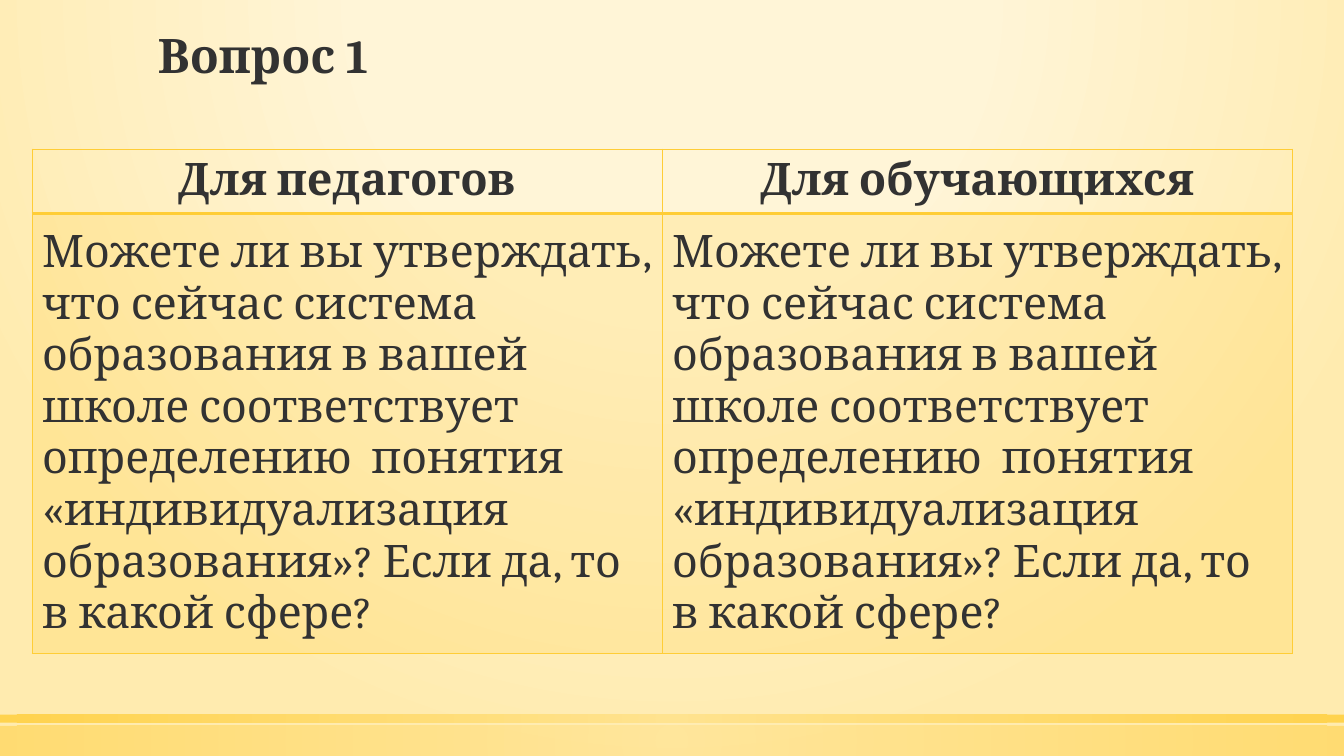
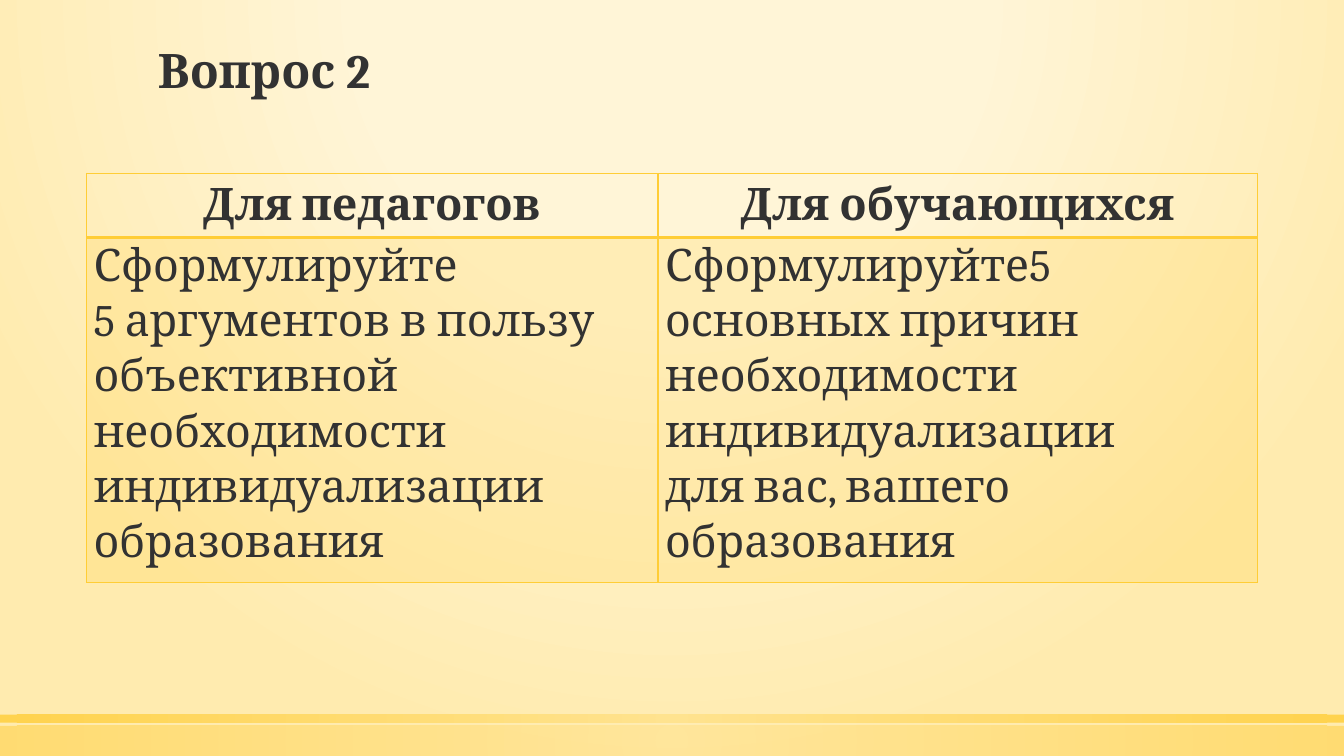
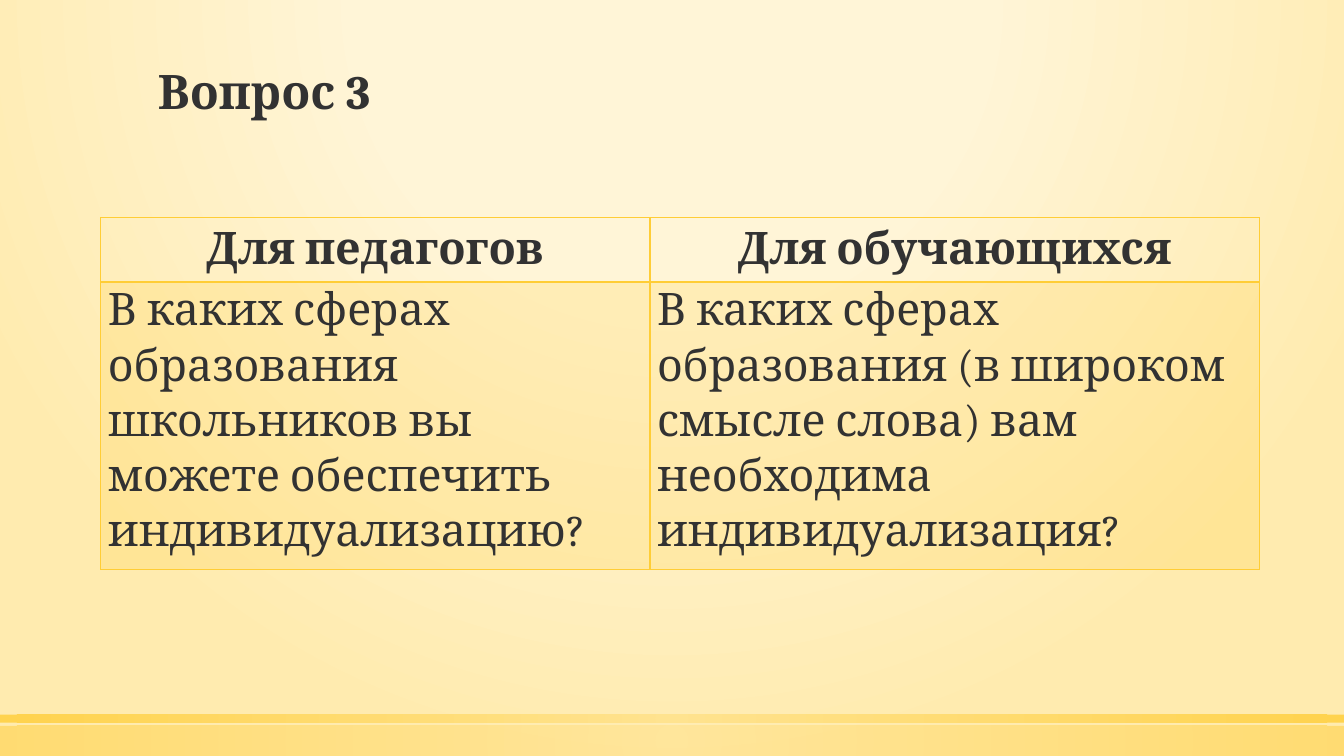
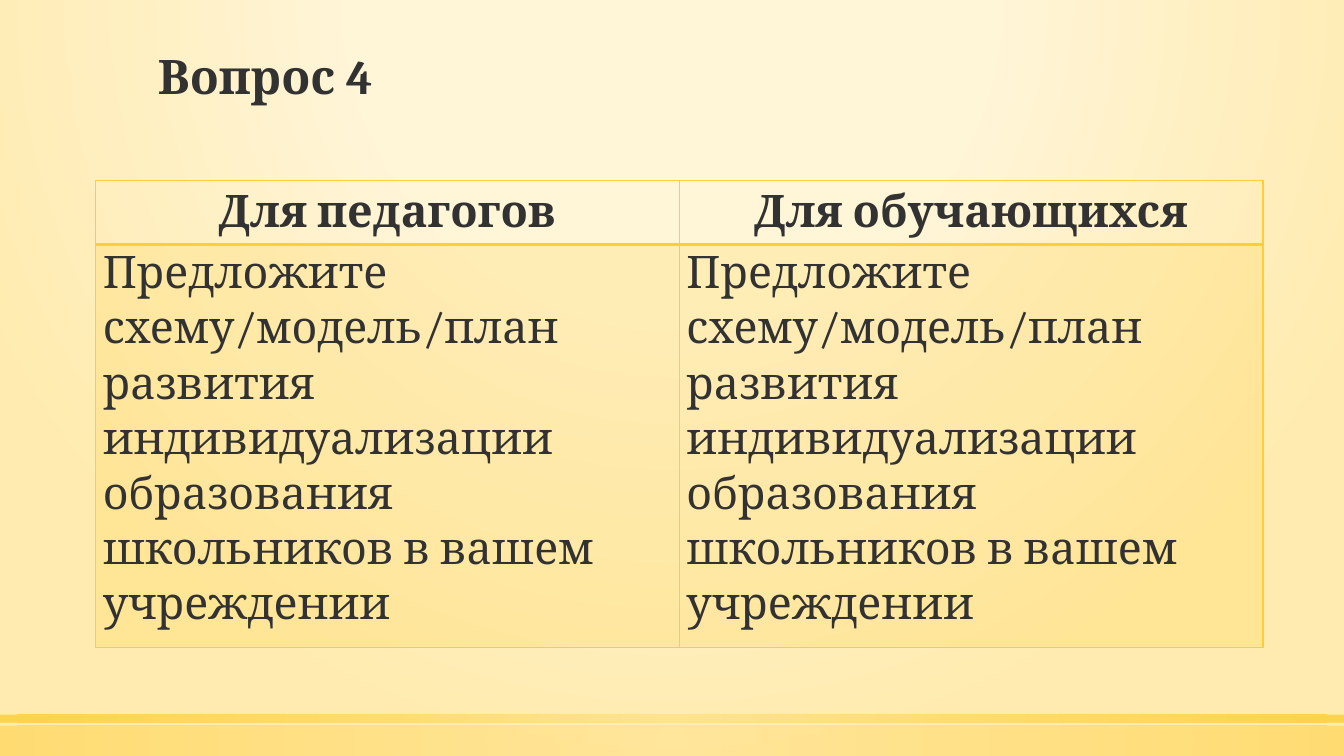
from lxml.etree import SubElement
from pptx import Presentation
from pptx.dml.color import RGBColor
from pptx.enum.shapes import MSO_SHAPE
from pptx.enum.text import MSO_ANCHOR, PP_ALIGN
from pptx.oxml.ns import qn
from pptx.util import Cm, Pt

COLORS = {
    "text": "323232",
    "cream": "FFF5D7",
    "sand": "FFEBAF",
    "light": "FFE186",
    "gold": "FFCD36",
}
FONT = "Cambria"
WIDTH, HEIGHT = 33.87, 19.05
HEADINGS = ("Для педагогов", "Для обучающихся")
HEADER_HEIGHT = 1.55

TITLE_FORMAT = {"size": Pt(34), "bold": True}
HEADER_FORMAT = {"size": Pt(32), "bold": True}
BODY_FORMAT = {"size": Pt(32), "bold": False}

# Cell layouts: margins and anchor of the cell
ROOMY = {
    "margin_left": Cm(0.25), "margin_right": Cm(0.25),
    "margin_top": Cm(0.13), "margin_bottom": Cm(0.13),
    "vertical_anchor": MSO_ANCHOR.MIDDLE,
}
TIGHT = {
    "margin_left": Cm(0.18), "margin_right": Cm(0.18),
    "margin_top": 0, "margin_bottom": 0,
    "vertical_anchor": MSO_ANCHOR.TOP,
}

DEFINITION = (
    "Можете ли вы утверждать, что сейчас система образования в вашей школе "
    "соответствует определению  понятия «индивидуализация образования»? "
    "Если да, то в какой сфере?"
)
PLAN = (
    "Предложите схему/модель/план развития индивидуализации образования "
    "школьников в вашем учреждении"
)

QUESTIONS = [
    {
        "title_top": 0.28, "left": 0.81, "top": 3.76,
        "columns": (15.88, 15.88), "body_height": 10.6,
        "layout": ROOMY, "line_spacing": 1.0,
        "answers": ([DEFINITION], [DEFINITION]),
    },
    {
        "title_top": 0.66, "left": 2.18, "top": 4.37,
        "columns": (14.4, 15.11), "body_height": 8.3,
        "layout": TIGHT, "line_spacing": 1.07,
        "answers": (
            ["Сформулируйте",
             "5 аргументов в пользу объективной необходимости "
             "индивидуализации образования"],
            ["Сформулируйте\t5 основных причин необходимости индивидуализации",
             "для вас, вашего образования"],
        ),
    },
    {
        "title_top": 1.19, "left": 2.54, "top": 5.49,
        "columns": (13.84, 15.37), "body_height": 6.9,
        "layout": TIGHT, "line_spacing": 1.07,
        "answers": (
            ["В каких сферах образования школьников вы можете обеспечить "
             "индивидуализацию?"],
            ["В каких сферах образования (в широком смысле слова) вам "
             "необходима индивидуализация?"],
        ),
    },
    {
        "title_top": 0.81, "left": 2.41, "top": 4.55,
        "columns": (14.71, 14.71), "body_height": 9.7,
        "layout": TIGHT, "line_spacing": 1.07,
        "answers": ([PLAN], [PLAN]),
    },
]


def set_all(target, values):
    for name, value in values.items():
        setattr(target, name, value)


def add_color(parent, color, opacity=100):
    element = SubElement(parent, qn("a:srgbClr"), val=COLORS[color])
    if opacity < 100:
        SubElement(element, qn("a:alpha"), val=str(opacity * 1000))


def paint_radial(owner, fill, stops, focus):
    """Give the fill a circular gradient; stops are (position, color, opacity)."""
    fill.gradient()
    gradient = owner.element.find(".//" + qn("a:gradFill"))
    for child in list(gradient):
        gradient.remove(child)
    stop_list = SubElement(gradient, qn("a:gsLst"))
    for position, color, opacity in stops:
        stop = SubElement(stop_list, qn("a:gs"), pos=str(position * 1000))
        add_color(stop, color, opacity)
    circle = SubElement(gradient, qn("a:path"), path="circle")
    sides = {side: str(value * 1000) for side, value in zip("ltrb", focus)}
    SubElement(circle, qn("a:fillToRect"), **sides)


class Deck:
    """Holds the shared style and the slide being built."""

    def __init__(self):
        self.presentation = Presentation()
        self.presentation.slide_width = Cm(WIDTH)
        self.presentation.slide_height = Cm(HEIGHT)
        self.slide = None
        master = self.presentation.slide_master
        paint_radial(
            master, master.background.fill,
            [(0, "cream", 59), (40, "cream", 66), (100, "sand", 100)],
            (50, -80, 50, 180),
        )

    def add_slide(self):
        self.slide = self.presentation.slides.add_slide(
            self.presentation.slide_layouts[6])
        self.add_band(18.29, 0.76, 50)
        self.add_band(18.01, 0.2, 80)

    def add_band(self, top, height, opacity):
        band = self.slide.shapes.add_shape(
            MSO_SHAPE.RECTANGLE, 0, Cm(top), Cm(WIDTH), Cm(height))
        band.shadow.inherit = False
        band.line.fill.background()
        paint_radial(
            band, band.fill,
            [(0, "light", opacity), (100, "gold", opacity)], (50, 50, 50, 50),
        )

    def add_text(self, paragraph, text, font_format, **paragraph_format):
        set_all(paragraph, paragraph_format)
        run = paragraph.add_run()
        run.text = text
        set_all(run.font, {"name": FONT, **font_format})
        run.font.color.rgb = RGBColor.from_string(COLORS["text"])

    def add_title(self, text, top):
        box = self.slide.shapes.add_textbox(
            Cm(3.73), Cm(top), Cm(26.42), Cm(3.43))
        set_all(box.text_frame, {
            "word_wrap": True,
            "vertical_anchor": MSO_ANCHOR.BOTTOM,
            "margin_bottom": Cm(1.6),
        })
        self.add_text(box.text_frame.paragraphs[0], text, TITLE_FORMAT,
                      line_spacing=0.9)

    def add_borders(self, cell, bottom=1):
        properties = cell._tc.get_or_add_tcPr()
        for side, points in zip("LRTB", (1, 1, 1, bottom)):
            line = SubElement(properties, qn("a:ln" + side), w=str(Pt(points)))
            add_color(SubElement(line, qn("a:solidFill")), "gold")

    def add_right_tab(self, paragraph, position):
        properties = paragraph._p.get_or_add_pPr()
        tabs = SubElement(properties, qn("a:tabLst"))
        SubElement(tabs, qn("a:tab"), pos=str(Cm(position)), algn="r")

    def fill_header(self, cell, text):
        set_all(cell, ROOMY)
        self.add_borders(cell, bottom=2)
        cell.fill.background()
        self.add_text(cell.text_frame.paragraphs[0], text, HEADER_FORMAT,
                      alignment=PP_ALIGN.CENTER)

    def fill_body(self, cell, texts, layout, line_spacing, width):
        set_all(cell, layout)
        self.add_borders(cell)
        cell.fill.solid()
        cell.fill.fore_color.rgb = RGBColor.from_string(COLORS["gold"])
        color = cell._tc.tcPr.find(qn("a:solidFill")).find(qn("a:srgbClr"))
        SubElement(color, qn("a:alpha"), val="20000")
        frame = cell.text_frame
        for index, text in enumerate(texts):
            paragraph = frame.add_paragraph() if index else frame.paragraphs[0]
            self.add_text(paragraph, text, BODY_FORMAT,
                          line_spacing=line_spacing)
            if "\t" in text:
                self.add_right_tab(paragraph, width - 0.66)

    def add_table(self, left, top, columns, body_height, answers, layout,
                  line_spacing):
        table = self.slide.shapes.add_table(
            2, len(columns), Cm(left), Cm(top), Cm(sum(columns)),
            Cm(HEADER_HEIGHT + body_height)).table
        set_all(table, {"first_row": False, "horz_banding": False})
        for row, height in zip(table.rows, (HEADER_HEIGHT, body_height)):
            row.height = Cm(height)
        for index, width in enumerate(columns):
            table.columns[index].width = Cm(width)
            self.fill_header(table.cell(0, index), HEADINGS[index])
            self.fill_body(table.cell(1, index), answers[index], layout,
                           line_spacing, width)


def main():
    deck = Deck()
    for number, question in enumerate(QUESTIONS, start=1):
        table_format = dict(question)
        title_top = table_format.pop("title_top")
        deck.add_slide()
        deck.add_title(f"Вопрос {number}", title_top)
        deck.add_table(**table_format)
    deck.presentation.save("out.pptx")


if __name__ == "__main__":
    main()
